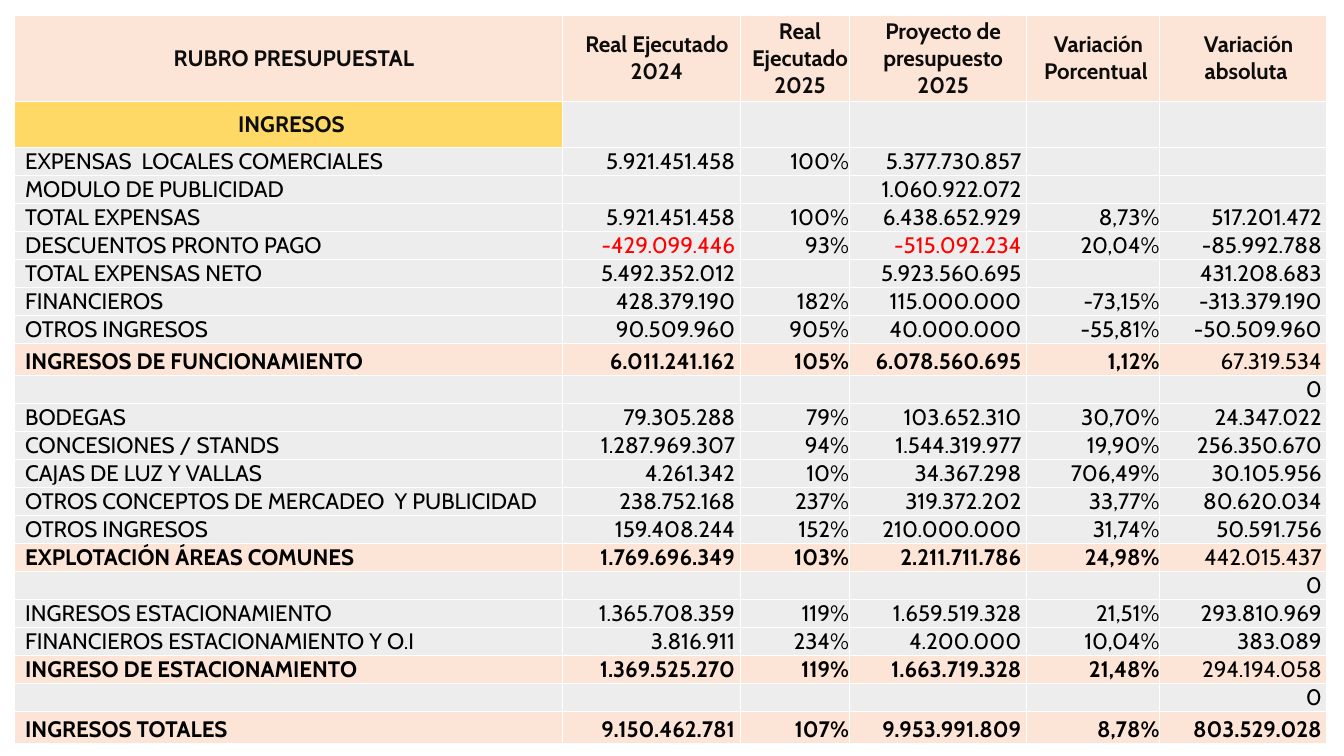
from lxml.etree import SubElement
from pptx import Presentation
from pptx.dml.color import RGBColor
from pptx.enum.text import MSO_ANCHOR, PP_ALIGN
from pptx.oxml.ns import qn
from pptx.util import Inches, Pt

FONT, FONT_SIZE = "Cabin", 16
PEACH, YELLOW, GREY, WHITE = "FCE4D6", "FFD966", "EDEDED", "FFFFFF"
BLACK, DARK, RED = "000000", "0D0D0D", "FF0000"

LEFT, TOP, WIDTH, HEIGHT = 0.14, 0.15, 13.02, 7.23
COLUMN_WIDTHS = [5.44, 1.76, 1.08, 1.76, 1.32, 1.66]
SPECIAL_HEIGHTS = {0: 0.86, 1: 0.45, 9: 0.32, 22: 0.32}
EXECUTED, PROJECT, DIFFERENCE = 1, 3, 5

HEADINGS = ("RUBRO PRESUPUESTAL", "Real Ejecutado 2024", "Real Ejecutado 2025",
            "Proyecto de presupuesto 2025", "Variación Porcentual ", "Variación absoluta ")
SECTION = ("INGRESOS ", "", "", "", "", "")
SPACER = ("", "", "", "", "", "0")
BUDGET = [
    ("EXPENSAS  LOCALES COMERCIALES", "5.921.451.458", "100%", "5.377.730.857", "", ""),
    ("MODULO DE PUBLICIDAD", "", "", "1.060.922.072", "", ""),
    ("TOTAL EXPENSAS", "5.921.451.458", "100%", "6.438.652.929", "8,73%", "517.201.472"),
    ("DESCUENTOS PRONTO PAGO", "-429.099.446", "93%", "-515.092.234", "20,04%", "-85.992.788"),
    ("TOTAL EXPENSAS NETO", "5.492.352.012", "", "5.923.560.695", "", "431.208.683"),
    ("FINANCIEROS", "428.379.190", "182%", "115.000.000", "-73,15%", "-313.379.190"),
    ("OTROS INGRESOS", "90.509.960", "905%", "40.000.000", "-55,81%", "-50.509.960"),
    ("INGRESOS DE FUNCIONAMIENTO", "6.011.241.162", "105%", "6.078.560.695", "1,12%", "67.319.534"),
    SPACER,
    ("BODEGAS", "79.305.288", "79%", "103.652.310", "30,70%", "24.347.022"),
    ("CONCESIONES / STANDS", "1.287.969.307", "94%", "1.544.319.977", "19,90%", "256.350.670"),
    ("CAJAS DE LUZ Y VALLAS", "4.261.342", "10%", "34.367.298", "706,49%", "30.105.956"),
    ("OTROS CONCEPTOS DE MERCADEO  Y PUBLICIDAD", "238.752.168", "237%", "319.372.202",
     "33,77%", "80.620.034"),
    ("OTROS INGRESOS", "159.408.244", "152%", "210.000.000", "31,74%", "50.591.756"),
    ("EXPLOTACIÓN ÁREAS COMUNES", "1.769.696.349", "103%", "2.211.711.786", "24,98%", "442.015.437"),
    SPACER,
    ("INGRESOS ESTACIONAMIENTO", "1.365.708.359", "119%", "1.659.519.328", "21,51%", "293.810.969"),
    ("FINANCIEROS ESTACIONAMIENTO Y O.I", "3.816.911", "234%", "4.200.000", "10,04%", "383.089"),
    ("INGRESO DE ESTACIONAMIENTO", "1.369.525.270", "119%", "1.663.719.328", "21,48%", "294.194.058"),
    SPACER,
    ("INGRESOS TOTALES", "9.150.462.781", "107%", "9.953.991.809", "8,78%", "803.529.028"),
]
SUBTOTALS = {"INGRESOS DE FUNCIONAMIENTO", "EXPLOTACIÓN ÁREAS COMUNES", "INGRESO DE ESTACIONAMIENTO"}
GRAND_TOTAL = "INGRESOS TOTALES"


def color(value):
    return RGBColor.from_string(value)


def add_borders(cell):
    properties = cell._tc.get_or_add_tcPr()
    for index, side in enumerate(("a:lnL", "a:lnR", "a:lnT", "a:lnB")):
        line = properties.makeelement(qn(side), {"w": str(Pt(0.5))})
        fill = SubElement(line, qn("a:solidFill"))
        SubElement(fill, qn("a:srgbClr"), val=WHITE)
        properties.insert(index, line)


def style_cell(cell, fill, anchor):
    cell.fill.solid()
    cell.fill.fore_color.rgb = color(fill)
    cell.vertical_anchor = anchor
    cell.margin_left = Inches(0.11)
    cell.margin_right = cell.margin_top = cell.margin_bottom = 0
    add_borders(cell)


def write_cell(cell, text, alignment, text_color, bold):
    paragraph = cell.text_frame.paragraphs[0]
    paragraph.alignment = alignment
    if not text:
        # An empty cell needs its own size, or it stretches the row.
        SubElement(paragraph._p, qn("a:endParaRPr"), sz=str(FONT_SIZE * 100))
        return
    run = paragraph.add_run()
    run.text = text
    run.font.name = FONT
    run.font.size = Pt(FONT_SIZE)
    run.font.bold = bold
    run.font.color.rgb = color(text_color)


def fill_heading_row(row, texts, fills):
    for cell, text, fill in zip(row.cells, texts, fills):
        style_cell(cell, fill, MSO_ANCHOR.MIDDLE)
        write_cell(cell, text, PP_ALIGN.CENTER, DARK, True)


def fill_budget_row(row, values):
    label = values[0]
    is_total = label in SUBTOTALS or label == GRAND_TOTAL
    for column, (cell, value) in enumerate(zip(row.cells, values)):
        is_amount = column in (EXECUTED, PROJECT, DIFFERENCE)
        is_red = column in (EXECUTED, PROJECT) and value.startswith("-")
        bold = label == GRAND_TOTAL or (is_total and column != DIFFERENCE)
        style_cell(cell, PEACH if is_total else GREY, MSO_ANCHOR.BOTTOM)
        write_cell(cell, value + " " if value and is_amount else value,
                   PP_ALIGN.RIGHT if column else PP_ALIGN.LEFT,
                   RED if is_red else BLACK, bold)


def add_budget_table(slide):
    row_count = len(BUDGET) + 2
    table = slide.shapes.add_table(row_count, len(COLUMN_WIDTHS), Inches(LEFT), Inches(TOP),
                                   Inches(WIDTH), Inches(HEIGHT)).table
    table.first_row = table.horz_banding = False
    for column, width in zip(table.columns, COLUMN_WIDTHS):
        column.width = Inches(width)
    plain_height = (HEIGHT - sum(SPECIAL_HEIGHTS.values())) / (row_count - len(SPECIAL_HEIGHTS))
    rows = list(table.rows)
    for index, row in enumerate(rows):
        row.height = Inches(SPECIAL_HEIGHTS.get(index, plain_height))
    fill_heading_row(rows[0], HEADINGS, [PEACH] * len(HEADINGS))
    fill_heading_row(rows[1], SECTION, [YELLOW] + [GREY] * (len(SECTION) - 1))
    for row, values in zip(rows[2:], BUDGET):
        fill_budget_row(row, values)


def main():
    presentation = Presentation()
    presentation.slide_width = Inches(13.33)
    presentation.slide_height = Inches(7.5)
    slide = presentation.slides.add_slide(presentation.slide_layouts[6])
    add_budget_table(slide)
    presentation.save("out.pptx")


if __name__ == "__main__":
    main()
